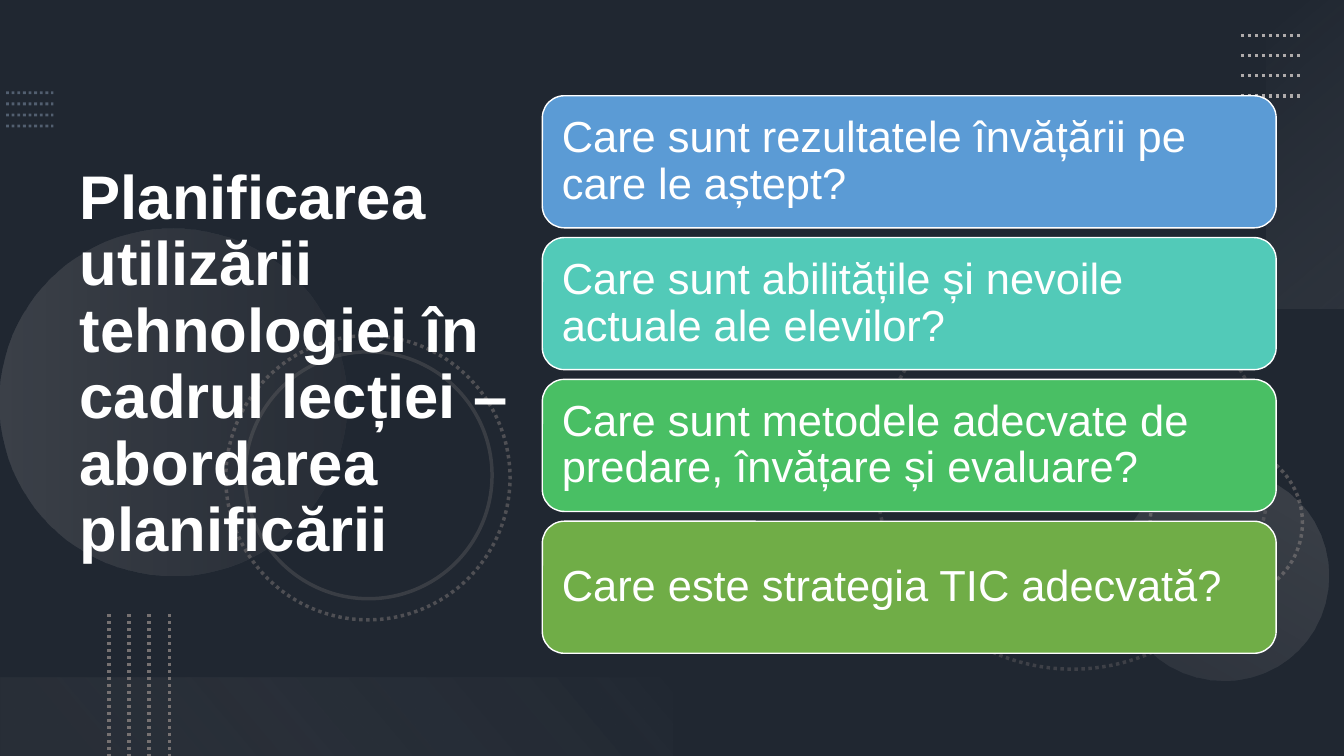
"""Build the slide on planning the use of technology in a lesson."""
from lxml import etree
from pptx import Presentation, util as u
from pptx.dml.color import RGBColor
from pptx.enum import dml, shapes, text
from pptx.oxml.ns import qn

SLATE = RGBColor(0x44, 0x54, 0x6A)
BLACK = RGBColor(0, 0, 0)
WHITE = RGBColor(0xFF, 0xFF, 0xFF)
STEEL = RGBColor(0x84, 0x97, 0xB0)
GRAY = RGBColor(0x76, 0x71, 0x71)
SILVER = RGBColor(0xAF, 0xAB, 0xAB)
MIST = RGBColor(0xF5, 0xF5, 0xF5)
BLUE = RGBColor(0x5B, 0x9B, 0xD5)
TEAL = RGBColor(0x52, 0xCA, 0xB8)
GREEN = RGBColor(0x49, 0xBF, 0x64)
OLIVE = RGBColor(0x70, 0xAD, 0x47)
FONT = "Arial"
DOTTED = dml.MSO_LINE.ROUND_DOT
RECT, OVAL, CARD = (shapes.MSO_SHAPE.RECTANGLE, shapes.MSO_SHAPE.OVAL,
                    shapes.MSO_SHAPE.ROUNDED_RECTANGLE)

deck = Presentation()
deck.slide_width, deck.slide_height = u.Inches(13.33), u.Inches(7.5)
col, row = deck.slide_width / 100, deck.slide_height / 100
slide = deck.slides.add_slide(deck.slide_layouts[5])
slide.background.fill.solid()
slide.background.fill.fore_color.rgb = SLATE


def add_plain(kind, left, top, width, height, rotation=0):
    """Add a shape without shadow, placed in columns and rows."""
    shape = slide.shapes.add_shape(kind, int(left * col), int(top * row),
                                   int(width * col), int(height * row))
    shape.shadow.inherit = False
    shape.rotation = rotation
    return shape


def set_opacity(shape, *percents):
    """Give each colour of a shape its opacity in percent."""
    for colour, percent in zip(shape._element.spPr.iter(qn("a:srgbClr")), percents):
        etree.SubElement(colour, qn("a:alpha")).set("val", str(percent * 1000))


veil = add_plain(RECT, 0, 0, 100, 100)
veil.fill.solid()
veil.fill.fore_color.rgb = BLACK
veil.line.fill.background()
set_opacity(veil, 53)

for left, top, diameter, rotation, dash, opacity in [
        (65.18, 36.53, 29.25, 75, DOTTED, 35),
        (85.58, 59.07, 11.33, 270, DOTTED, 60),
        (16.8, 44.4, 21.15, 75, DOTTED, 55),
        (18.23, 46.53, 18.38, 75, None, 30)]:
    ring = add_plain(OVAL, left, top, diameter, diameter * col / row, rotation)
    ring.fill.background()
    ring.line.color.rgb = GRAY
    ring.line.width = u.Pt(2.5)
    ring.line.dash_style = dash
    set_opacity(ring, opacity)

for kind, left, top, width, height, rotation, angle, stops in [
        (OVAL, 0, 30.27, 25.8, 45.87, 270, 90, [(0, SILVER, 20), (1, GRAY, 10)]),
        (OVAL, 83.25, 62.27, 15.6, 27.73, 210, 90, [(0, SILVER, 10), (1, SILVER, 20)]),
        (RECT, 85.65, 15.2, 22.95, 10.4, 270, 140, [(0, MIST, 0), (1, SILVER, 10)]),
        (RECT, 0, 89.6, 50, 10.4, 180, 140, [(0.1, GRAY, 10), (1, MIST, 0)])]:
    glow = add_plain(kind, left, top, width, height, rotation)
    glow.line.fill.background()
    glow.fill.gradient()
    glow.fill.gradient_angle = 360 - angle
    for stop, (position, colour, opacity) in zip(glow.fill.gradient_stops, stops):
        stop.position = position
        stop.color.rgb = colour
    set_opacity(glow, *[opacity for position, colour, opacity in stops])

for left, top, right, bottom, step_x, step_y, colour, weight, opacity in [
        (0.45, 12.27, 3.98, 12.27, 0, 1.47, STEEL, 2, 50),
        (92.33, 4.67, 96.83, 4.67, 0, 2.67, SILVER, 2.5, 100),
        (8.1, 81.2, 8.1, 100, 1.5, 0, GRAY, 2.5, 100)]:
    for index in range(4):
        across, down = index * step_x, index * step_y
        dots = slide.shapes.add_connector(
            shapes.MSO_CONNECTOR.STRAIGHT,
            int((left + across) * col), int((top + down) * row),
            int((right + across) * col), int((bottom + down) * row))
        dots.line.color.rgb = colour
        dots.line.width = u.Pt(weight)
        dots.line.dash_style = DOTTED
        set_opacity(dots, opacity)
        etree.SubElement(dots._element.spPr, qn("a:effectLst"))

heading = slide.shapes.title
slide.shapes._spTree.append(heading._element)
heading.left, heading.top = int(5.18 * col), int(7.2 * row)
heading.width, heading.height = int(34.43 * col), int(82.27 * row)
heading.text_frame.text = ("Planificarea utilizării tehnologiei în cadrul lecției – "
                           "abordarea planificării")
heading_format = {"size": u.Pt(44), "bold": True}
written = [(heading, heading_format)]

questions = [
    ("Care sunt rezultatele învățării pe care le aștept?", BLUE),
    ("Care sunt abilitățile și nevoile actuale ale elevilor?", TEAL),
    ("Care sunt metodele adecvate de predare, învățare și evaluare?", GREEN),
    ("Care este strategia TIC adecvată?", OLIVE)]
for index, (question, colour) in enumerate(questions):
    card = add_plain(CARD, 40.35, 12.67 + index * 18.76, 54.6, 17.47)
    card.fill.solid()
    card.fill.fore_color.rgb = colour
    card.line.color.rgb = WHITE
    card.line.width = u.Pt(1)
    card.text_frame.text = question
    for side in ("left", "top", "right", "bottom"):
        setattr(card.text_frame, f"margin_{side}", u.Inches(0.13))
    written.append((card, {"size": u.Pt(31), "bold": False}))

for holder, font_format in written:
    frame = holder.text_frame
    frame.word_wrap = True
    frame.auto_size = text.MSO_AUTO_SIZE.NONE
    frame.vertical_anchor = text.MSO_ANCHOR.MIDDLE
    paragraph = frame.paragraphs[0]
    paragraph.alignment = text.PP_ALIGN.LEFT
    paragraph.line_spacing = 0.9
    font = paragraph.runs[0].font
    font.color.rgb = WHITE
    for name, value in {"name": FONT, **font_format}.items():
        setattr(font, name, value)

deck.save("out.pptx")
